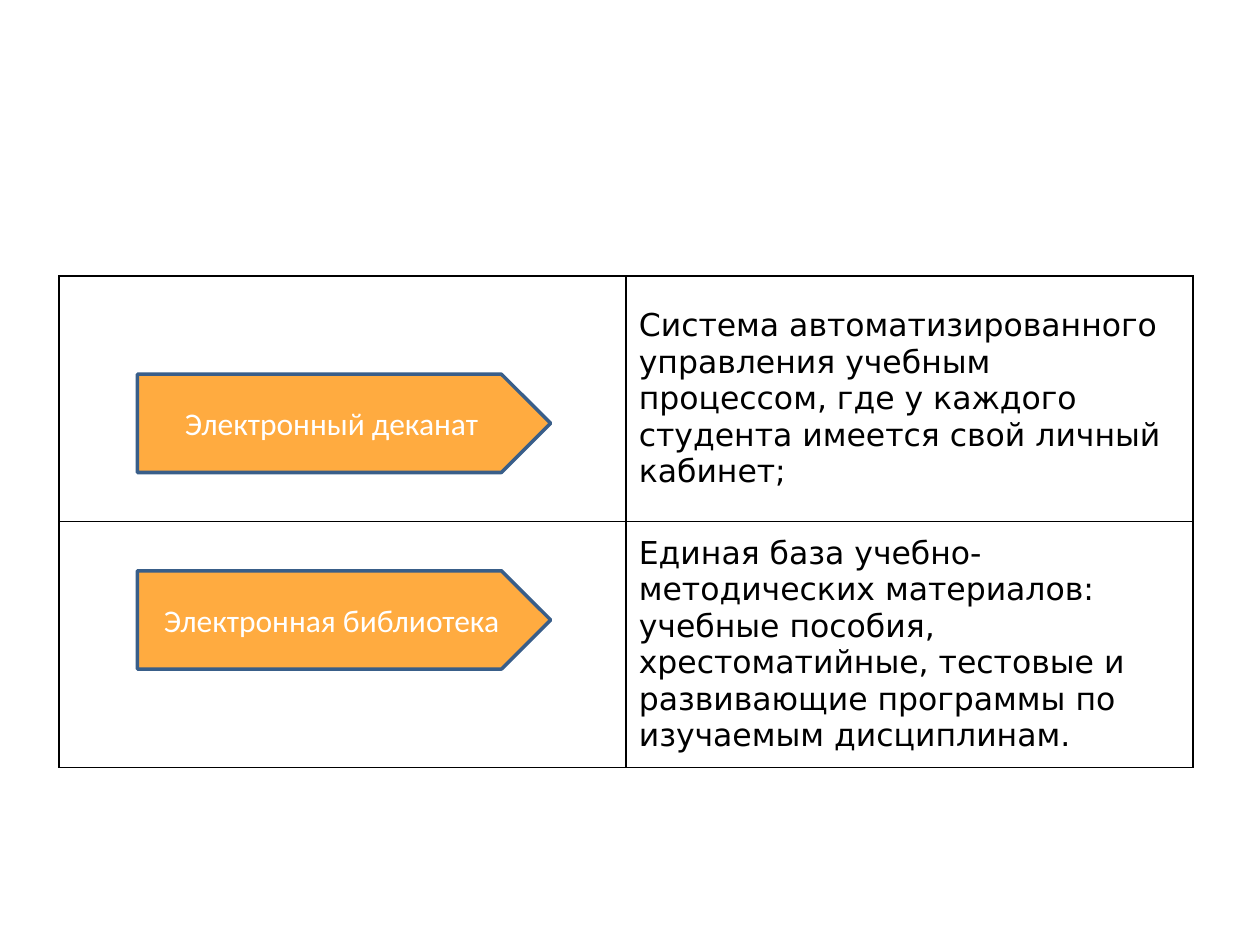
from dataclasses import dataclass

from lxml.etree import SubElement
from pptx import Presentation
from pptx.dml.color import RGBColor
from pptx.enum.shapes import MSO_SHAPE
from pptx.enum.text import MSO_ANCHOR, PP_ALIGN
from pptx.oxml.ns import qn
from pptx.slide import Slide
from pptx.table import _Cell
from pptx.util import Inches, Pt

COLORS = {
    "background": "FFFFFF",
    "description": "000000",
    "border": "000000",
    "arrow": "FFAB40",
    "arrow_outline": "395E89",
    "arrow_label": "FFFFFF",
}
TABLE_LEFT, TABLE_TOP = 0.47, 2.19
COLUMN_WIDTH, ROW_HEIGHT = 4.5, 1.95
ARROW_LEFT, ARROW_WIDTH, ARROW_HEIGHT = 1.09, 3.28, 0.78


@dataclass
class Service:
    name: str
    description: str
    arrow_top: float


SERVICES = [
    Service(
        "Электронный деканат",
        "Система автоматизированного управления учебным процессом, "
        "где у каждого студента имеется свой личный кабинет;",
        2.97,
    ),
    Service(
        "Электронная библиотека",
        "Единая база учебно-методических материалов: учебные пособия, "
        "хрестоматийные, тестовые и развивающие программы "
        "по изучаемым дисциплинам.",
        4.53,
    ),
]


def color(role: str) -> RGBColor:
    return RGBColor.from_string(COLORS[role])


def format_cell(cell: _Cell) -> None:
    """Give the cell thin borders on all sides and no fill."""
    properties = cell._tc.get_or_add_tcPr()
    for side in ("a:lnL", "a:lnR", "a:lnT", "a:lnB"):
        border = SubElement(properties, qn(side), w=str(Pt(1)))
        fill = SubElement(border, qn("a:solidFill"))
        SubElement(fill, qn("a:srgbClr"), val=COLORS["border"])
    cell.fill.background()
    cell.vertical_anchor = MSO_ANCHOR.MIDDLE


def add_descriptions(slide: Slide, services: list[Service]) -> None:
    table = slide.shapes.add_table(
        len(services), 2, Inches(TABLE_LEFT), Inches(TABLE_TOP),
        Inches(2 * COLUMN_WIDTH), Inches(len(services) * ROW_HEIGHT),
    ).table
    table.first_row = False
    table.horz_banding = False
    for cell in table.iter_cells():
        format_cell(cell)
    for row, service in enumerate(services):
        cell = table.cell(row, 1)
        cell.text = service.description
        font = cell.text_frame.paragraphs[0].font
        font.name = "DejaVu Sans"
        font.size = Pt(18)
        font.color.rgb = color("description")


def add_arrow(slide: Slide, service: Service) -> None:
    arrow = slide.shapes.add_shape(
        MSO_SHAPE.PENTAGON, Inches(ARROW_LEFT), Inches(service.arrow_top),
        Inches(ARROW_WIDTH), Inches(ARROW_HEIGHT),
    )
    arrow.shadow.inherit = False
    arrow.fill.solid()
    arrow.fill.fore_color.rgb = color("arrow")
    arrow.line.color.rgb = color("arrow_outline")
    arrow.line.width = Pt(2)
    arrow.text_frame.text = service.name
    arrow.text_frame.vertical_anchor = MSO_ANCHOR.MIDDLE
    label = arrow.text_frame.paragraphs[0]
    label.alignment = PP_ALIGN.CENTER
    label.font.name = "Calibri"
    label.font.size = Pt(18)
    label.font.color.rgb = color("arrow_label")


def main() -> None:
    presentation = Presentation()
    presentation.slide_width = Inches(10)
    presentation.slide_height = Inches(7.5)
    slide = presentation.slides.add_slide(presentation.slide_layouts[6])
    slide.background.fill.solid()
    slide.background.fill.fore_color.rgb = color("background")
    add_descriptions(slide, SERVICES)
    for service in SERVICES:
        add_arrow(slide, service)
    presentation.save("out.pptx")


if __name__ == "__main__":
    main()
